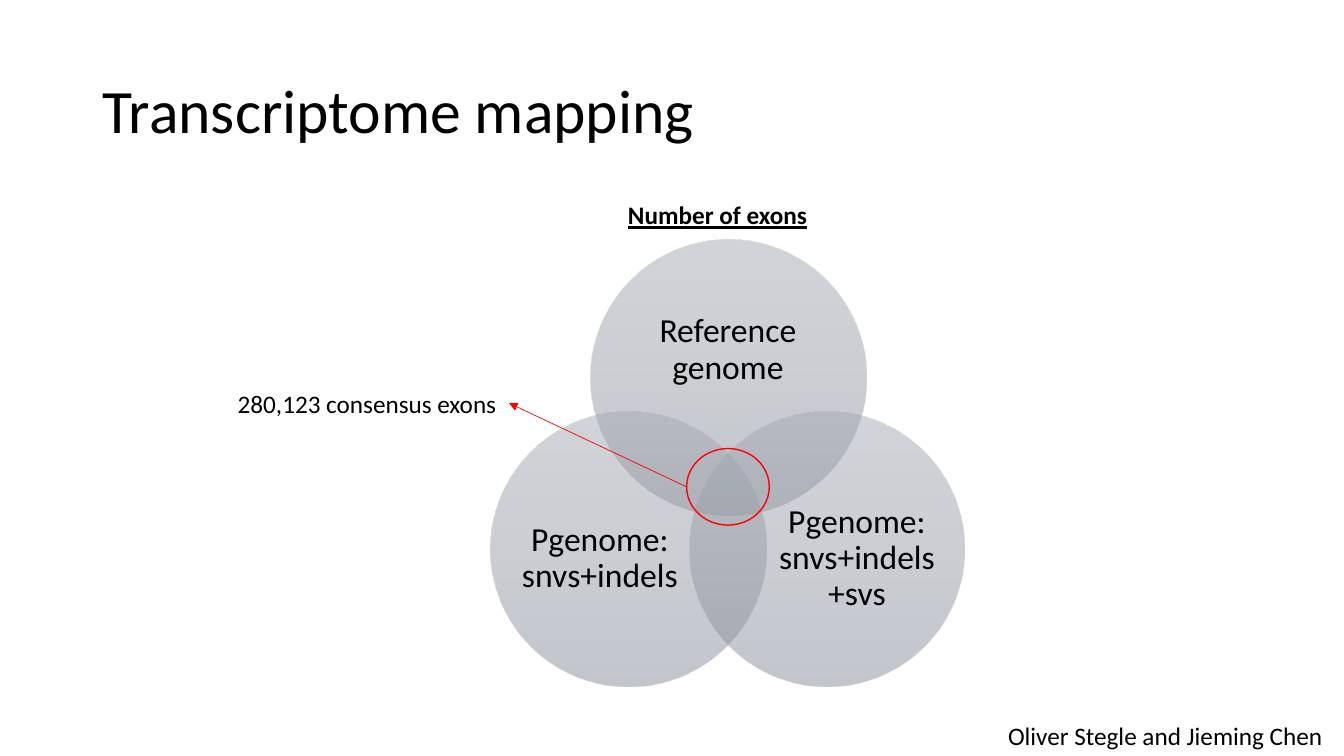
import pptx
import pptx.dml.color
import pptx.enum.shapes
import pptx.enum.text
import pptx.oxml
import pptx.oxml.ns
import pptx.util
from lxml import etree
from pptx.util import Inches

COLORS = {
    "text": "000000",
    "highlight": "FF0000",
    "circle_top": "A5AAB3",
    "circle_middle": "999EA7",
    "circle_bottom": "878E9A",
}
FONT = "Calibri"
CIRCLE_SIZE = 2.73


def rgb(name):
    return pptx.dml.color.RGBColor.from_string(COLORS[name])


def add_text(slide, box, text, size=18, centered=False, wrap=False,
             margins=True, spacing=None, middle=False, heading=False):
    frame = slide.shapes.add_textbox(*map(Inches, box)).text_frame
    frame.word_wrap = wrap
    if middle:
        frame.vertical_anchor = pptx.enum.text.MSO_ANCHOR.MIDDLE
    if not margins:
        frame.margin_left = frame.margin_right = 0
        frame.margin_top = frame.margin_bottom = 0
    paragraph = frame.paragraphs[0]
    paragraph.text = text
    if centered:
        paragraph.alignment = pptx.enum.text.PP_ALIGN.CENTER
    if spacing:
        paragraph.line_spacing = spacing
    paragraph.font.name = FONT
    paragraph.font.size = pptx.util.Pt(size)
    paragraph.font.color.rgb = rgb("text")
    if heading:
        paragraph.font.bold = True
        paragraph.font.underline = True


def add_ellipse(slide, box):
    ellipse = slide.shapes.add_shape(
        pptx.enum.shapes.MSO_SHAPE.OVAL, *map(Inches, box))
    ellipse.shadow.inherit = False
    return ellipse


def add_venn_circle(slide, left, top, label, label_box):
    circle = add_ellipse(slide, (left, top, CIRCLE_SIZE, CIRCLE_SIZE))
    circle.line.fill.background()
    circle.fill.gradient()
    circle.fill.gradient_angle = 270
    qn = pptx.oxml.ns.qn
    stops = next(circle.element.spPr.iter(qn("a:gsLst")))
    for stop in list(stops):
        stops.remove(stop)
    for position, name in enumerate(("circle_top", "circle_middle", "circle_bottom")):
        stop = etree.SubElement(stops, qn("a:gs"), pos=str(position * 50000))
        color = etree.SubElement(stop, qn("a:srgbClr"), val=COLORS[name])
        etree.SubElement(color, qn("a:alpha"), val="50000")
    add_text(slide, label_box, label, size=24, centered=True, wrap=True,
             margins=False, spacing=0.9, middle=True)


def add_highlight_ring(slide, box):
    ring = add_ellipse(slide, box)
    ring.fill.background()
    ring.line.color.rgb = rgb("highlight")
    ring.line.width = pptx.util.Pt(1)


def add_arrow(slide, start, end):
    arrow = slide.shapes.add_connector(
        pptx.enum.shapes.MSO_CONNECTOR.STRAIGHT, *map(Inches, start + end))
    arrow.line.color.rgb = rgb("highlight")
    arrow.line.width = pptx.util.Pt(0.5)
    qn = pptx.oxml.ns.qn
    etree.SubElement(arrow.line._get_or_add_ln(), qn("a:tailEnd"), type="triangle")
    etree.SubElement(arrow.element.spPr, qn("a:effectLst"))


def main():
    deck = pptx.Presentation()
    deck.slide_width = Inches(13.33)
    deck.slide_height = Inches(7.5)
    slide = deck.slides.add_slide(deck.slide_layouts[6])

    add_text(slide, (0.92, 0.4, 11.5, 1.45), "Transcriptome mapping",
             size=44, wrap=True, spacing=0.9, middle=True)
    add_venn_circle(slide, 5.86, 2.38, "Reference\vgenome", (6.22, 2.86, 2, 1.23))
    add_venn_circle(slide, 6.84, 4.08, "Pgenome: snvs+indels+svs", (7.68, 4.79, 1.64, 1.5))
    add_venn_circle(slide, 4.87, 4.08, "Pgenome: snvs+indels", (5.13, 4.79, 1.64, 1.5))
    add_text(slide, (6.13, 1.93, 1.99, 0.4), "Number of exons", heading=True)
    add_highlight_ring(slide, (6.81, 4.45, 0.82, 0.76))
    add_arrow(slide, (6.81, 4.83), (5.05, 4))
    add_text(slide, (2.26, 3.8, 2.8, 0.4), "280,123 consensus exons")
    add_text(slide, (9.9, 7.1, 3.36, 0.4), "Oliver Stegle and Jieming Chen")

    deck.save("out.pptx")


if __name__ == "__main__":
    main()
